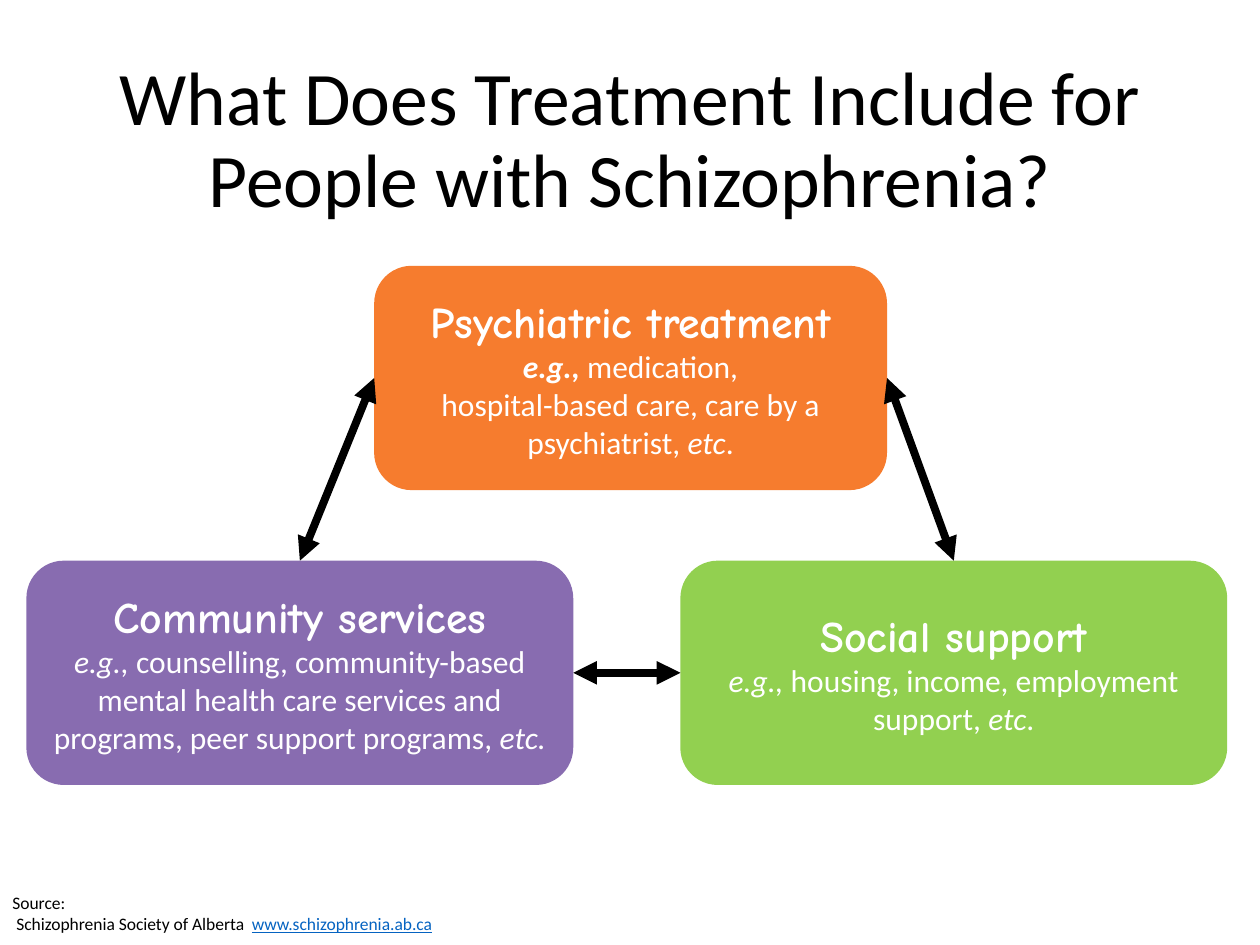
from dataclasses import dataclass

from lxml import etree
from pptx import Presentation
from pptx.dml.color import RGBColor
from pptx.enum.shapes import MSO_CONNECTOR, MSO_SHAPE
from pptx.enum.text import MSO_ANCHOR, PP_ALIGN
from pptx.oxml.ns import qn
from pptx.util import Inches, Pt

ROUNDED = MSO_SHAPE.ROUNDED_RECTANGLE
STRAIGHT = MSO_CONNECTOR.STRAIGHT
MIDDLE = MSO_ANCHOR.MIDDLE
CENTER = PP_ALIGN.CENTER
TOP, LEFT, RIGHT = 0, 1, 3

BLACK = RGBColor(0x00, 0x00, 0x00)
WHITE = RGBColor(0xFF, 0xFF, 0xFF)
ORANGE = RGBColor(0xF6, 0x7C, 0x2E)
PURPLE = RGBColor(0x88, 0x6C, 0xB0)
GREEN = RGBColor(0x92, 0xD0, 0x50)
LINK_BLUE = RGBColor(0x05, 0x63, 0xC1)

BODY_FONT = "Calibri"
HEADING_FONT = "Comic Neue"
CARD_HEIGHT = 1.78
LOWER_TOP = 4.45
LOWER_WIDTH = 4.34


@dataclass(frozen=True)
class Span:
    text: str
    italic: bool = False
    bold: bool = False


@dataclass(frozen=True)
class Card:
    left: float
    top: float
    width: float
    color: RGBColor
    heading: str
    lines: tuple[tuple[Span, ...], ...]


CARDS = (
    Card(2.97, 2.11, 4.07, ORANGE, "Psychiatric treatment", (
        (Span("e.g., ", italic=True, bold=True), Span("medication,")),
        (Span("hospital-based care, care by a psychiatrist, "),
         Span("etc", italic=True), Span(".")),
    )),
    Card(0.21, LOWER_TOP, LOWER_WIDTH, PURPLE, "Community services", (
        (Span("e.g., ", italic=True),
         Span("counselling, community-based mental health care services and "
              "programs, peer support programs, "),
         Span("etc.", italic=True)),
    )),
    Card(5.4, LOWER_TOP, LOWER_WIDTH, GREEN, "Social support", (
        (Span("e.g., ", italic=True), Span("housing, income, employment support, "),
         Span("etc", italic=True), Span(".")),
    )),
)


def add_run(para, text: str, size: float, color: RGBColor, font: str = BODY_FONT,
            bold: bool = False, italic: bool = False, underline: bool = False) -> None:
    run = para.add_run()
    run.text = text
    run.font.name = font
    run.font.size = Pt(size)
    run.font.color.rgb = color
    run.font.bold = bold
    run.font.italic = italic
    run.font.underline = underline


def add_title(page) -> None:
    box = page.shapes.add_textbox(Inches(0.69), Inches(0.4), Inches(8.62), Inches(1.45))
    frame = box.text_frame
    frame.word_wrap = True
    frame.vertical_anchor = MIDDLE
    para = frame.paragraphs[0]
    para.alignment = CENTER
    para.line_spacing = 0.9
    add_run(para, "What Does Treatment Include for People with Schizophrenia?", 43.2, BLACK)


def add_source(page) -> None:
    box = page.shapes.add_textbox(Inches(0), Inches(7.03), Inches(3.59), Inches(0.44))
    frame = box.text_frame
    frame.word_wrap = False
    add_run(frame.paragraphs[0], "Source:", 10, BLACK)
    para = frame.add_paragraph()
    add_run(para, " Schizophrenia Society of Alberta  ", 10, BLACK)
    add_run(para, "www.schizophrenia.ab.ca", 10, LINK_BLUE, underline=True)


def add_card(page, card: Card):
    shape = page.shapes.add_shape(ROUNDED, Inches(card.left), Inches(card.top),
                                  Inches(card.width), Inches(CARD_HEIGHT))
    shape.shadow.inherit = False
    shape.fill.solid()
    shape.fill.fore_color.rgb = card.color
    shape.line.fill.background()
    frame = shape.text_frame
    frame.word_wrap = True
    frame.vertical_anchor = MIDDLE
    heading = frame.paragraphs[0]
    heading.alignment = CENTER
    add_run(heading, card.heading, 25, WHITE, HEADING_FONT, bold=True)
    para = frame.add_paragraph()
    para.alignment = CENTER
    for index, line in enumerate(card.lines):
        if index:
            para.add_line_break()
        for span in line:
            add_run(para, span.text, 18, WHITE, bold=span.bold, italic=span.italic)
    return shape


def add_double_arrow(page, start, start_side: int, end, end_side: int) -> None:
    arrow = page.shapes.add_connector(STRAIGHT, 0, 0, 0, 0)
    arrow.begin_connect(start, start_side)
    arrow.end_connect(end, end_side)
    arrow.line.color.rgb = BLACK
    arrow.line.width = Pt(4.5)
    properties = arrow._element.spPr
    outline = properties.find(qn("a:ln"))
    for tag in ("a:headEnd", "a:tailEnd"):
        etree.SubElement(outline, qn(tag), type="triangle")
    etree.SubElement(properties, qn("a:effectLst"))


def main() -> None:
    deck = Presentation()
    deck.slide_width = Inches(10)
    deck.slide_height = Inches(7.5)
    page = deck.slides.add_slide(deck.slide_layouts[6])
    add_title(page)
    add_source(page)
    psychiatric, community, social = [add_card(page, card) for card in CARDS]
    add_double_arrow(page, psychiatric, RIGHT, social, TOP)
    add_double_arrow(page, community, RIGHT, social, LEFT)
    add_double_arrow(page, psychiatric, LEFT, community, TOP)
    deck.save("out.pptx")


if __name__ == "__main__":
    main()
